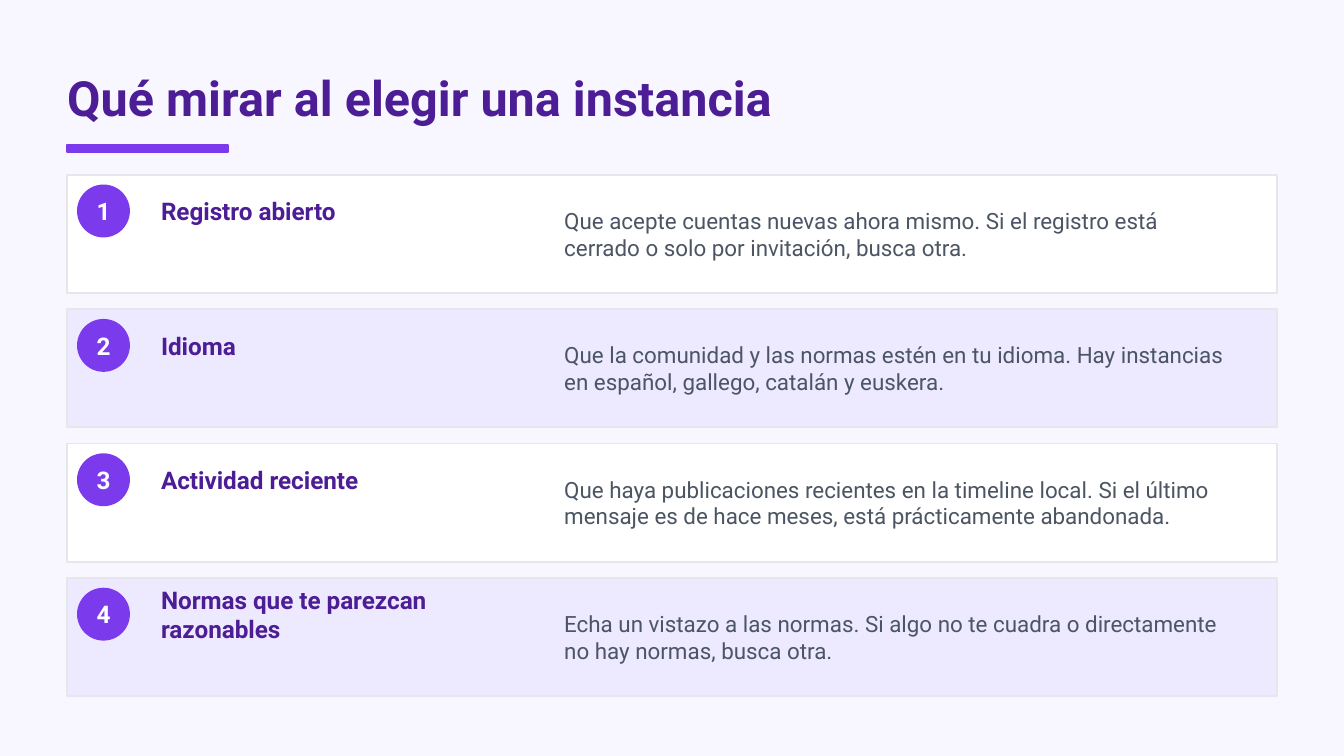
from dataclasses import dataclass

from pptx import Presentation
from pptx.dml.color import RGBColor
from pptx.enum.shapes import MSO_SHAPE
from pptx.enum.text import MSO_ANCHOR, MSO_AUTO_SIZE, PP_ALIGN
from pptx.util import Inches, Pt


@dataclass(frozen=True)
class Theme:
    font: str = "Roboto"
    background: str = "F8F7FF"
    heading: str = "4C1D95"
    accent: str = "7C3AED"
    body: str = "4B5563"
    white: str = "FFFFFF"
    tint: str = "EDE9FE"
    border: str = "E5E7EB"
    title_size: int = 26
    label_size: int = 13
    body_size: int = 12


THEME = Theme()
SLIDE_WIDTH = 10
FIRST_ROW_TOP = 1.3
ROW_PITCH = 1.0

CRITERIA = [
    ("Registro abierto",
     "Que acepte cuentas nuevas ahora mismo. Si el registro está cerrado "
     "o solo por invitación, busca otra."),
    ("Idioma",
     "Que la comunidad y las normas estén en tu idioma. Hay instancias "
     "en español, gallego, catalán y euskera."),
    ("Actividad reciente",
     "Que haya publicaciones recientes en la timeline local. Si el último "
     "mensaje es de hace meses, está prácticamente abandonada."),
    ("Normas que te parezcan razonables",
     "Echa un vistazo a las normas. Si algo no te cuadra o directamente "
     "no hay normas, busca otra."),
]


def write_text(shape, text, size, color, bold=False, align=PP_ALIGN.LEFT):
    frame = shape.text_frame
    frame.text = text
    frame.word_wrap = True
    frame.auto_size = MSO_AUTO_SIZE.NONE
    frame.vertical_anchor = MSO_ANCHOR.MIDDLE
    paragraph = frame.paragraphs[0]
    paragraph.alignment = align
    paragraph.font.name = THEME.font
    paragraph.font.size = Pt(size)
    paragraph.font.bold = bold
    paragraph.font.color.rgb = RGBColor.from_string(color)


def add_title(slide, text):
    title = slide.shapes.title
    title.left, title.top = Inches(0.5), Inches(0.4)
    title.width, title.height = Inches(9), Inches(0.65)
    write_text(title, text, THEME.title_size, THEME.heading, bold=True)
    frame = title.text_frame
    frame.margin_left = frame.margin_right = 0
    frame.margin_top = frame.margin_bottom = 0


def add_panel(slide, kind, left, top, width, height, fill, line):
    shape = slide.shapes.add_shape(
        kind, Inches(left), Inches(top), Inches(width), Inches(height))
    shape.shadow.inherit = False
    shape.fill.solid()
    shape.fill.fore_color.rgb = RGBColor.from_string(fill)
    shape.line.color.rgb = RGBColor.from_string(line)
    shape.line.width = Pt(1)


def add_text(slide, left, top, width, height, text, size, color,
             bold=False, align=PP_ALIGN.LEFT):
    box = slide.shapes.add_textbox(
        Inches(left), Inches(top), Inches(width), Inches(height))
    write_text(box, text, size, color, bold, align)


def add_criterion(slide, number, name, advice):
    top = FIRST_ROW_TOP + (number - 1) * ROW_PITCH
    fill = THEME.white if number % 2 else THEME.tint
    badge = (0.58, top + 0.08, 0.38, 0.38)
    add_panel(slide, MSO_SHAPE.RECTANGLE, 0.5, top, 9, 0.88, fill, THEME.border)
    add_panel(slide, MSO_SHAPE.OVAL, *badge, THEME.accent, THEME.accent)
    add_text(slide, *badge, str(number), THEME.label_size, THEME.white,
             bold=True, align=PP_ALIGN.CENTER)
    add_text(slide, 1.1, top + 0.09, 2.8, 0.36, name,
             THEME.label_size, THEME.heading, bold=True)
    add_text(slide, 4.1, top + 0.09, 5.2, 0.7, advice, THEME.body_size, THEME.body)


def main():
    # Widescreen 16:9 slide
    presentation = Presentation()
    presentation.slide_width = Inches(SLIDE_WIDTH)
    presentation.slide_height = Inches(SLIDE_WIDTH * 9 / 16)
    slide = presentation.slides.add_slide(presentation.slide_layouts[5])
    slide.background.fill.solid()
    slide.background.fill.fore_color.rgb = RGBColor.from_string(THEME.background)

    # Title with its accent bar
    add_title(slide, "Qué mirar al elegir una instancia")
    add_panel(slide, MSO_SHAPE.RECTANGLE, 0.5, 1.08, 1.2, 0.05,
              THEME.accent, THEME.accent)

    # Numbered criteria, one band each
    for number, (name, advice) in enumerate(CRITERIA, start=1):
        add_criterion(slide, number, name, advice)

    presentation.save("out.pptx")


if __name__ == "__main__":
    main()
